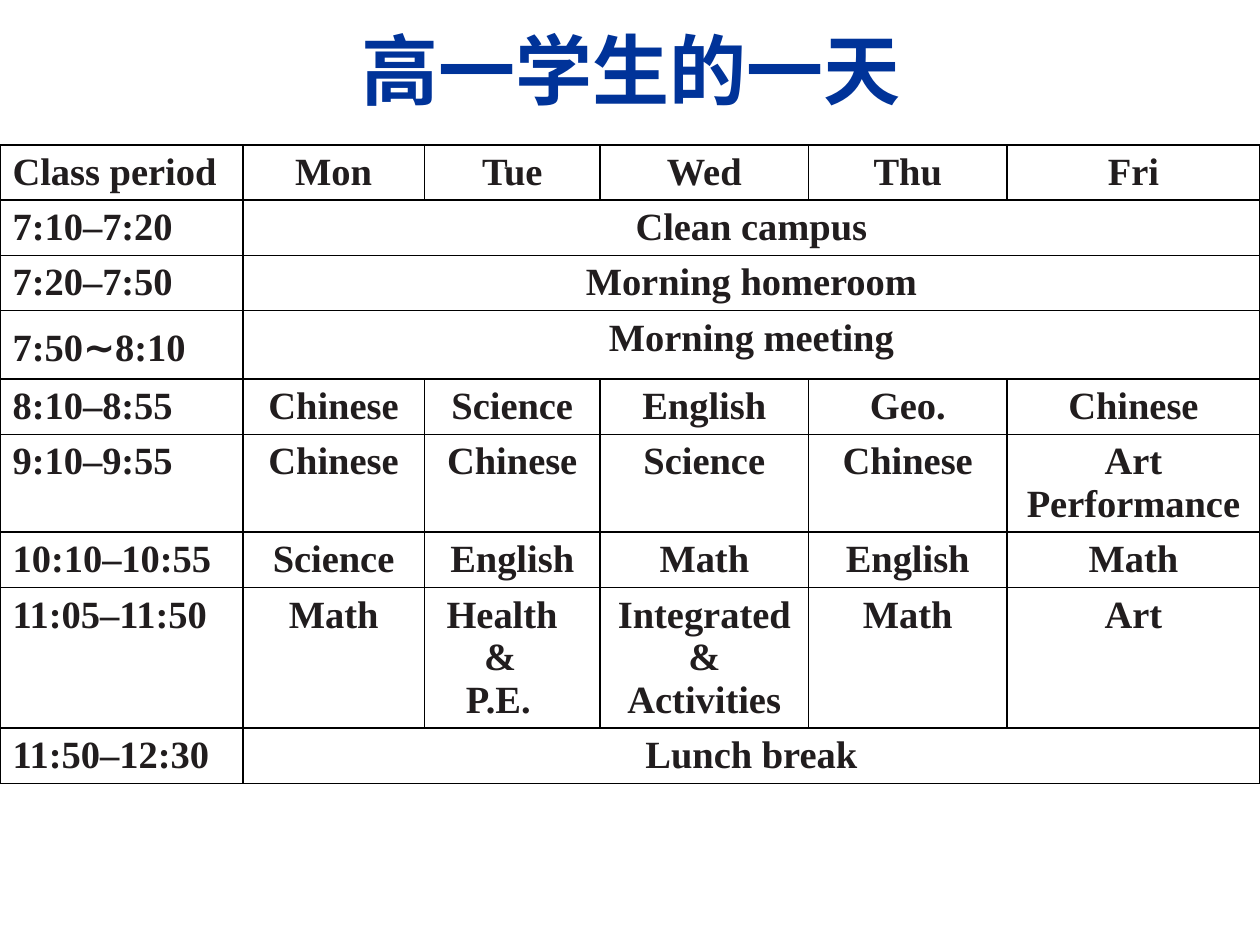
from dataclasses import dataclass

from lxml import etree
from pptx import Presentation
from pptx.dml.color import RGBColor
from pptx.enum.text import MSO_ANCHOR, PP_ALIGN
from pptx.oxml.ns import qn
from pptx.util import Pt

LEFT, CENTER = PP_ALIGN.LEFT, PP_ALIGN.CENTER
TOP, MIDDLE, BOTTOM = MSO_ANCHOR.TOP, MSO_ANCHOR.MIDDLE, MSO_ANCHOR.BOTTOM
TITLE_ONLY = 5


@dataclass(frozen=True)
class Theme:
    title_color: str = "003399"
    text_color: str = "211D1E"
    border_color: str = "000000"
    title_size: float = 44
    text_size: float = 22
    border_width: float = 1
    title_font: str = "Arial"
    text_font: str = "Times New Roman"
    asian_font: str = "Noto Sans CJK JP"
    hanging: float = 27


# Schedule content: a row of two entries spans its second one over the week
TILDE = "∼"
SCHEDULE = [
    ["Class period", "Mon", "Tue", "Wed", "Thu", "Fri"],
    ["7:10–7:20", "Clean campus"],
    ["7:20–7:50", "Morning homeroom"],
    ["7:50∼8:10", "Morning meeting"],
    ["8:10–8:55", "Chinese", "Science", "English", "Geo.", "Chinese"],
    ["9:10–9:55", "Chinese", "Chinese", "Science", "Chinese", "Art\nPerformance"],
    ["10:10–10:55", "Science", "English", "Math", "English", "Math"],
    ["11:05–11:50", "Math", "Health &\nP.E.", "Integrated\n&\nActivities", "Math", "Art"],
    ["11:50–12:30", "Lunch break"],
]
COLUMN_WIDTHS = [138.8, 103.7, 100.5, 119, 113.5, 144.5]
ROW_HEIGHTS = [31.6, 31.6, 31.6, 38.9, 31.6, 56, 31.6, 80.4, 31.6]
ROW_ANCHORS = {6: MIDDLE}
CELL_ANCHORS = {(1, 0): BOTTOM, (8, 0): MIDDLE}
# Left-aligned subject, with the extra start of each of its lines
STEPPED_STARTS = {(7, 2): [5.5, 16.5]}


def write(paragraph, text, font, size, color, asian_font=None, bold=True):
    """Add a formatted run to a paragraph."""
    run = paragraph.add_run()
    run.text = text
    run.font.name = font
    run.font.size = Pt(size)
    run.font.bold = bold
    run.font.color.rgb = RGBColor.from_string(color)
    if asian_font:
        latin = run.font._element.find(qn("a:latin"))
        east_asian = etree.Element(qn("a:ea"), typeface=asian_font)
        latin.addnext(east_asian)


class SlideBuilder:
    def __init__(self, slide, theme):
        self.slide = slide
        self.theme = theme

    def title(self, text, left, top, width, height):
        heading = self.slide.shapes.title
        heading.left, heading.top = Pt(left), Pt(top)
        heading.width, heading.height = Pt(width), Pt(height)
        heading.text_frame.vertical_anchor = MIDDLE
        paragraph = heading.text_frame.paragraphs[0]
        paragraph.alignment = CENTER
        write(paragraph, text, self.theme.title_font, self.theme.title_size,
              self.theme.title_color, self.theme.asian_font)

    def borders(self, cell):
        properties = cell._tc.get_or_add_tcPr()
        for position, side in enumerate(("lnL", "lnR", "lnT", "lnB")):
            line = etree.Element(qn(f"a:{side}"), w=str(Pt(self.theme.border_width)))
            fill = etree.SubElement(line, qn("a:solidFill"))
            etree.SubElement(fill, qn("a:srgbClr"), val=self.theme.border_color)
            properties.insert(position, line)

    def cell_text(self, cell, text, alignment, starts=None):
        theme = self.theme
        frame = cell.text_frame
        for number, line in enumerate(text.split("\n")):
            paragraph = frame.add_paragraph() if number else frame.paragraphs[0]
            paragraph.alignment = alignment
            start = starts[number] if starts else 0
            properties = paragraph._p.get_or_add_pPr()
            properties.set("marL", str(Pt(theme.hanging)))
            properties.set("indent", str(Pt(start - theme.hanging)))
            for part in filter(None, line.partition(TILDE)):
                asian = theme.asian_font if part == TILDE else None
                write(paragraph, part, asian or theme.text_font,
                      theme.text_size, theme.text_color, asian)

    def schedule(self, rows, widths, heights, left, top):
        frame = self.slide.shapes.add_table(
            len(rows), len(widths), Pt(left), Pt(top), Pt(sum(widths)), Pt(sum(heights)))
        table = frame.table
        table.first_row = table.horz_banding = False
        for column, width in zip(table.columns, widths):
            column.width = Pt(width)
        for row, height in zip(table.rows, heights):
            row.height = Pt(height)

        # Plain cells with a full grid
        for cell in table.iter_cells():
            cell.fill.background()
            self.borders(cell)

        # Times on the left, subjects centred under the days
        for r, entries in enumerate(rows):
            if len(entries) == 2:
                table.cell(r, 1).merge(table.cell(r, len(widths) - 1))
            for c, text in enumerate(entries):
                cell = table.cell(r, c)
                cell.vertical_anchor = CELL_ANCHORS.get((r, c), ROW_ANCHORS.get(r, TOP))
                starts = STEPPED_STARTS.get((r, c))
                alignment = LEFT if c == 0 or starts else CENTER
                self.cell_text(cell, text, alignment, starts)


def main():
    presentation = Presentation()
    presentation.slide_width, presentation.slide_height = Pt(720), Pt(540)
    slide = presentation.slides.add_slide(presentation.slide_layouts[TITLE_ONLY])
    builder = SlideBuilder(slide, Theme())
    builder.title("高一学生的一天", 36.5, 0, 648, 78.5)
    builder.schedule(SCHEDULE, COLUMN_WIDTHS, ROW_HEIGHTS, 0, 82.8)
    presentation.save("out.pptx")


if __name__ == "__main__":
    main()
